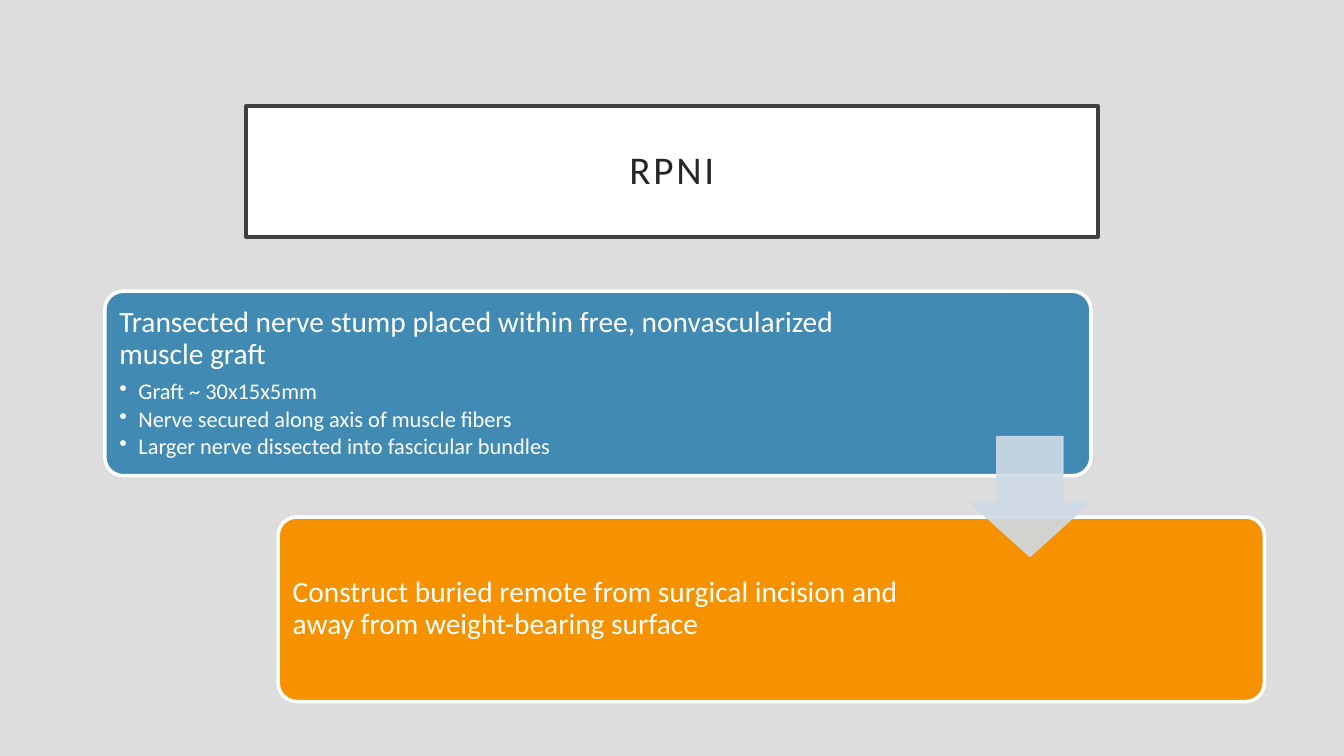
from lxml import etree
from pptx import Presentation
from pptx.dml.color import RGBColor
from pptx.enum.shapes import MSO_SHAPE
from pptx.enum.text import MSO_ANCHOR, PP_ALIGN
from pptx.oxml.ns import qn
from pptx.util import Inches, Pt

ROUNDED = MSO_SHAPE.ROUNDED_RECTANGLE
DOWN_ARROW = MSO_SHAPE.DOWN_ARROW
MIDDLE = MSO_ANCHOR.MIDDLE
LEFT, CENTER = PP_ALIGN.LEFT, PP_ALIGN.CENTER

FONT = "Calibri"
COLORS = {
    "background": "DDDDDD",
    "white": "FFFFFF",
    "title_text": "262626",
    "title_border": "404040",
    "blue": "418AB3",
    "orange": "F69200",
    "arrow": "CFDAE5",
}
WIDTH, HEIGHT = Inches(13.33), Inches(7.5)

# Places are percentages of the slide: left, top, width, height.
TITLE_AREA = (18.3, 14, 63.39, 17.33)
ARROW_AREA = (72.17, 57.73, 8.93, 15.87)
CARD_LEFT, CARD_TOP, CARD_WIDTH, CARD_HEIGHT = 7.8, 38.53, 73.37, 24.4
STEP_RIGHT, STEP_DOWN = 12.9, 29.87

# Fill, heading, bullets, right margin in inches.
CARDS = [
    ("blue", "Transected nerve stump placed within free, nonvascularized muscle graft",
     ["Graft ~ 30x15x5mm",
      "Nerve secured along axis of muscle fibers",
      "Larger nerve dissected into fascicular bundles"], 1.88),
    ("orange", "Construct buried remote from surgical incision and away from "
     "weight-bearing surface", [], 3.01),
]


def color(name):
    return RGBColor.from_string(COLORS[name])


def place(area):
    """Turn percentages of the slide into lengths."""
    left, top, width, height = area
    return (int(WIDTH * left / 100), int(HEIGHT * top / 100),
            int(WIDTH * width / 100), int(HEIGHT * height / 100))


def paint(shape, fill, border, thickness):
    shape.shadow.inherit = False
    shape.fill.solid()
    shape.fill.fore_color.rgb = color(fill)
    shape.line.color.rgb = color(border)
    shape.line.width = Pt(thickness)


def set_margins(frame, margin, right):
    frame.word_wrap = True
    frame.vertical_anchor = MIDDLE
    frame.margin_left = frame.margin_top = frame.margin_bottom = Inches(margin)
    frame.margin_right = Inches(right)


def format_paragraph(para, size, text_color, alignment=LEFT, space_after=0):
    para.alignment = alignment
    para.line_spacing = 0.9
    para.space_before = Pt(0)
    para.space_after = Pt(space_after)
    for span in para.runs:
        span.font.name = FONT
        span.font.size = Pt(size)
        span.font.color.rgb = color(text_color)


def add_bullet(para):
    properties = para._p.get_or_add_pPr()
    properties.set("marL", str(Inches(0.19)))
    properties.set("indent", str(-Inches(0.19)))
    etree.SubElement(properties, qn("a:buChar")).set("char", "•")


def add_title(page, text):
    title = page.shapes.title
    title.left, title.top, title.width, title.height = place(TITLE_AREA)
    paint(title, "white", "title_border", 2.5)
    frame = title.text_frame
    frame.text = text
    set_margins(frame, 0.2, 0.2)
    para = frame.paragraphs[0]
    format_paragraph(para, 28, "title_text", CENTER)
    para.runs[0]._r.get_or_add_rPr().set("spc", "200")


def add_card(page, index, fill, heading, bullets, right_margin):
    area = (CARD_LEFT + index * STEP_RIGHT, CARD_TOP + index * STEP_DOWN,
            CARD_WIDTH, CARD_HEIGHT)
    card = page.shapes.add_shape(ROUNDED, *place(area))
    card.adjustments[0] = 0.1
    paint(card, fill, "white", 2.5)
    frame = card.text_frame
    frame.text = "\n".join([heading, *bullets])
    set_margins(frame, 0.09, right_margin)
    first, *others = frame.paragraphs
    format_paragraph(first, 21, "white", space_after=7)
    for para in others:
        para.level = 1
        format_paragraph(para, 16, "white", space_after=2.4)
        add_bullet(para)


def add_arrow(page):
    arrow = page.shapes.add_shape(DOWN_ARROW, *place(ARROW_AREA))
    arrow.adjustments[0] = 0.55
    arrow.adjustments[1] = 0.45
    paint(arrow, "arrow", "arrow", 1)
    for tint in arrow._element.spPr.iter(qn("a:srgbClr")):
        etree.SubElement(tint, qn("a:alpha")).set("val", "90000")


def main():
    deck = Presentation()
    deck.slide_width, deck.slide_height = WIDTH, HEIGHT
    page = deck.slides.add_slide(deck.slide_layouts.get_by_name("Title Only"))
    page.background.fill.solid()
    page.background.fill.fore_color.rgb = color("background")
    add_title(page, "RPNI")
    for index, card in enumerate(CARDS):
        add_card(page, index, *card)
    add_arrow(page)
    deck.save("out.pptx")


if __name__ == "__main__":
    main()
